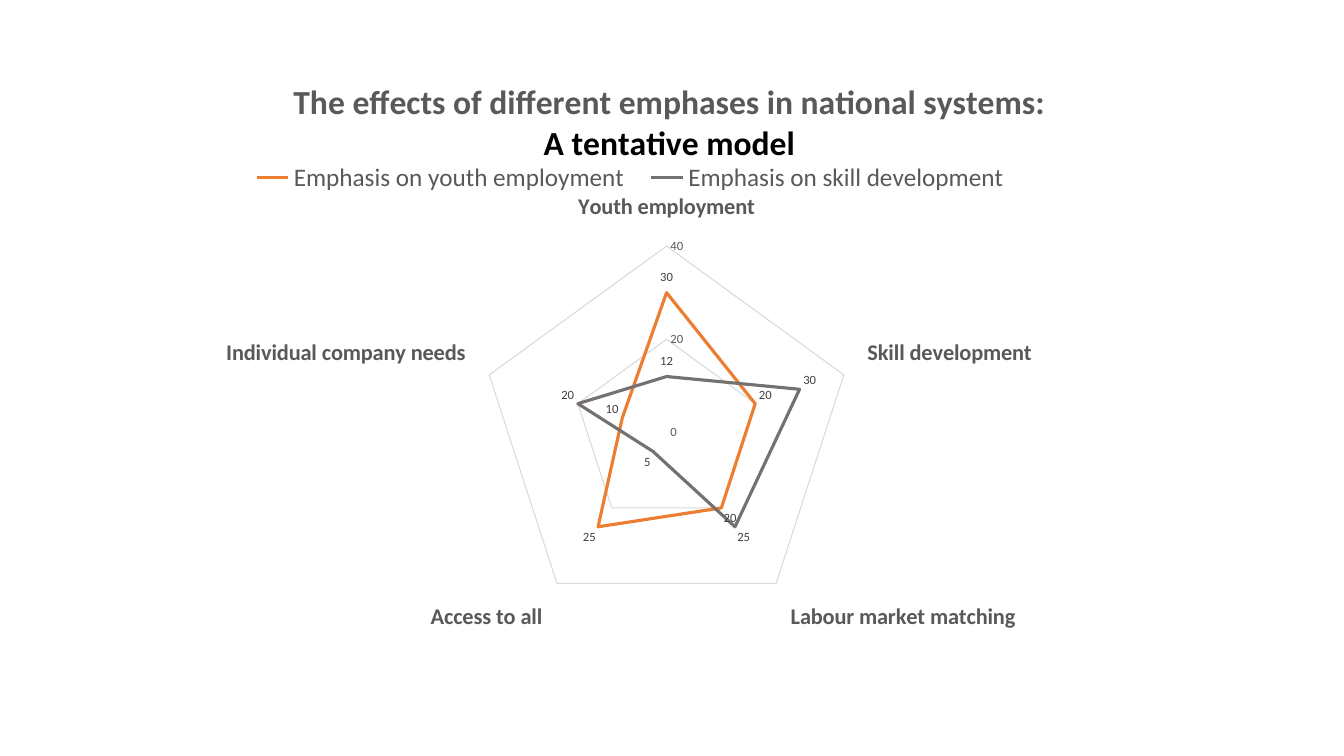
from lxml import etree
from pptx import Presentation
from pptx import util as u
from pptx.chart import data
from pptx.dml.color import RGBColor
from pptx.enum import chart as kinds
from pptx.oxml import ns

ORANGE = RGBColor(0xED, 0x7D, 0x31)
STONE = RGBColor(0x76, 0x71, 0x71)
GREY = RGBColor(0x59, 0x59, 0x59)
DARK = RGBColor(0x40, 0x40, 0x40)
PALE = RGBColor(0xD9, 0xD9, 0xD9)
BLACK = RGBColor(0, 0, 0)

TITLE = [
    ("The effects of different emphases in national systems:", GREY),
    ("A tentative model", BLACK),
]
GOALS = [
    "Youth employment",
    "Skill development",
    "Labour market matching",
    "Access to all",
    "Individual company needs",
]
SERIES = [
    ("Emphasis on youth employment", (30, 20, 20, 25, 10), ORANGE),
    ("Emphasis on skill development", (12, 30, 25, 5, 20), STONE),
]
FRAME = [u.Cm(n) for n in (3.63, 1.35, 26.34, 15.16)]
BOXES = [
    ("c:plotArea", 0, {"x": 0.32, "y": 0.32, "w": 0.36, "h": 0.62}),
    ("c:title", 1, {"x": 0.14, "y": 0.04}),
    ("c:legend", 1, {"x": 0.09, "y": 0.18, "w": 0.75, "h": 0.05}),
]
SCALE = {"minimum_scale": 0, "maximum_scale": 40, "major_unit": 20}


def assign(item, values):
    for name, value in values.items():
        setattr(item, name, value)


def style(font, size, color, bold=False):
    assign(font, {"name": "Calibri", "size": u.Pt(size), "bold": bold})
    font.color.rgb = color


def stroke(line, color, width):
    line.color.rgb = color
    line.width = u.Pt(width)


def place(node, index, box):
    for old in node.findall(ns.qn("c:layout")):
        node.remove(old)
    layout = etree.Element(ns.qn("c:layout"))
    manual = etree.SubElement(layout, ns.qn("c:manualLayout"))
    parts = [("layoutTarget", "inner")] if index == 0 else []
    parts += [(axis + "Mode", "edge") for axis in "xy"]
    parts += box.items()
    for name, value in parts:
        etree.SubElement(manual, ns.qn("c:" + name)).set("val", str(value))
    node.insert(index, layout)


def build(slide):
    model = data.CategoryChartData()
    model.categories = GOALS
    for name, values, color in SERIES:
        model.add_series(name, values)
    chart = slide.shapes.add_chart(
        kinds.XL_CHART_TYPE.RADAR, *FRAME, model).chart
    style(chart.font, 10, BLACK)

    frame = chart.chart_title.text_frame
    for i, (line, color) in enumerate(TITLE):
        para = frame.add_paragraph() if i else frame.paragraphs[0]
        run = para.add_run()
        run.text = line
        style(run.font, 24, color, True)

    chart.has_legend = True
    key = chart.legend
    assign(key, {"position": kinds.XL_LEGEND_POSITION.TOP,
                 "include_in_layout": False})
    style(key.font, 18, GREY)

    goal, scale = chart.category_axis, chart.value_axis
    for axis, size, bold in ((goal, 16, True), (scale, 9, False)):
        style(axis.tick_labels.font, size, GREY, bold)
        assign(axis, {"major_tick_mark": kinds.XL_TICK_MARK.NONE,
                      "minor_tick_mark": kinds.XL_TICK_MARK.NONE})
    goal.has_major_gridlines = False
    stroke(goal.format.line, PALE, 0.75)
    assign(scale, SCALE)
    scale.has_major_gridlines = True
    stroke(scale.major_gridlines.format.line, PALE, 0.75)
    scale.format.line.fill.background()

    plot = chart.plots[0]
    plot.vary_by_categories = False
    for series, (name, values, color) in zip(plot.series, SERIES):
        series.smooth = False
        series.marker.style = kinds.XL_MARKER_STYLE.NONE
        stroke(series.format.line, color, 2.25)
        labels = series.data_labels
        labels.show_value = True
        style(labels.font, 9, DARK)

    root = chart.element.find(ns.qn("c:chart"))
    for tag, index, box in BOXES:
        place(root.find(ns.qn(tag)), index, box)


def main():
    deck = Presentation()
    assign(deck, {"slide_width": u.Cm(33.87), "slide_height": u.Cm(19.05)})
    build(deck.slides.add_slide(deck.slide_layouts[6]))
    deck.save("out.pptx")


if __name__ == "__main__":
    main()
